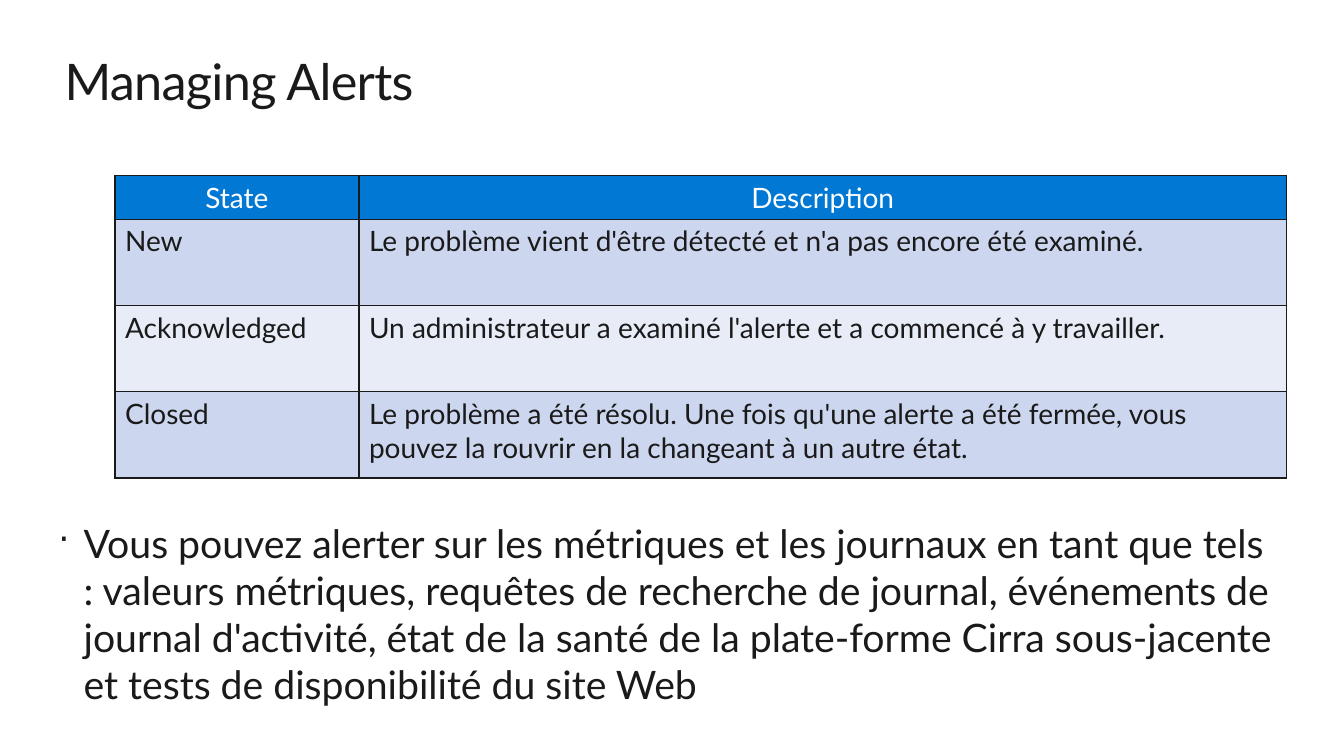
from lxml.etree import SubElement as Sub
from pptx import Presentation
from pptx.dml.color import RGBColor as Rgb
from pptx.enum.text import PP_ALIGN as Align
from pptx.oxml import parse_xml
from pptx.oxml.ns import nsdecls, qn
from pptx.util import Inches, Pt

FONT = "Lato"
COLORS = {
    "ink": "1A1A1A",
    "white": "FFFFFF",
    "head": "0078D4",
    "odd": "CCD6EF",
    "even": "E7ECF7",
}
STATES = [
    ("State", "Description"),
    ("New", "Le problème vient d'être détecté et n'a pas encore été examiné."),
    ("Acknowledged", "Un administrateur a examiné l'alerte et a commencé à y travailler."),
    ("Closed", "Le problème a été résolu. Une fois qu'une alerte a été fermée, vous "
               "pouvez la rouvrir en la changeant à un autre état."),
]
NOTE = ("Vous pouvez alerter sur les métriques et les journaux en tant que tels : "
        "valeurs métriques, requêtes de recherche de journal, événements de journal "
        "d'activité, état de la santé de la plate-forme Cirra sous-jacente et tests "
        "de disponibilité du site Web")


def write(frame, text, size, color="ink", align=Align.LEFT, track=0):
    """Fill the first paragraph of a frame and return it."""
    para = frame.paragraphs[0]
    para.alignment = align
    run = para.add_run()
    run.text = text
    run.font.size = Pt(size)
    run.font.name = FONT
    run.font.color.rgb = Rgb.from_string(COLORS[color])
    if track:
        run.font._element.set("spc", str(round(track * 100)))
    return para


def add_box(slide, left, top, width, height):
    """Add a wrapping text box without margins and return its frame."""
    box = slide.shapes.add_textbox(Inches(left), Inches(top), Inches(width), Inches(height))
    frame = box.text_frame
    frame.word_wrap = True
    frame.margin_left = frame.margin_top = frame.margin_right = frame.margin_bottom = 0
    return frame


def add_title(slide, left, top, width, height):
    write(add_box(slide, left, top, width, height), "Managing Alerts", 36, track=-0.5)


def add_note(slide, left, top, width, height):
    para = write(add_box(slide, left, top, width, height), NOTE, 28)
    para.space_before = Pt(5.6)
    props = para._p.get_or_add_pPr()
    props.set("marL", str(Inches(0.25)))
    props.set("indent", str(Inches(-0.25)))
    Sub(props, qn("a:buSzPct"), val="90000")
    Sub(props, qn("a:buChar"), char="·")


def frame_cell(cell):
    """Draw a thin line on all four sides of a cell."""
    props = cell._tc.get_or_add_tcPr()
    for spot, side in enumerate("LRTB"):
        props.insert(spot, parse_xml(
            f'<a:ln{side} {nsdecls("a")} w="{Pt(1)}"><a:solidFill>'
            f'<a:srgbClr val="{COLORS["ink"]}"/></a:solidFill></a:ln{side}>'))


def add_states(slide, left, top, width, height):
    first, head = 2.42, 0.43
    table = slide.shapes.add_table(len(STATES), 2, Inches(left), Inches(top),
                                   Inches(width), Inches(height)).table
    table.columns[0].width = Inches(first)
    table.columns[1].width = Inches(width - first)
    body = (height - head) / (len(STATES) - 1)
    for r, texts in enumerate(STATES):
        table.rows[r].height = Inches(body if r else head)
        fill = ("odd" if r % 2 else "even") if r else "head"
        for c, text in enumerate(texts):
            cell = table.cell(r, c)
            cell.fill.solid()
            cell.fill.fore_color.rgb = Rgb.from_string(COLORS[fill])
            frame_cell(cell)
            write(cell.text_frame, text, 20, color="ink" if r else "white",
                  align=Align.LEFT if r else Align.CENTER)


def main():
    deck = Presentation()
    deck.slide_width, deck.slide_height = Inches(13.33), Inches(7.5)
    slide = deck.slides.add_slide(deck.slide_layouts[6])
    add_title(slide, 0.64, 0.5, 12.05, 0.61)
    add_note(slide, 0.58, 5.15, 12.05, 1.88)
    add_states(slide, 1.14, 1.74, 11.62, 3)
    deck.save("out.pptx")


if __name__ == "__main__":
    main()
